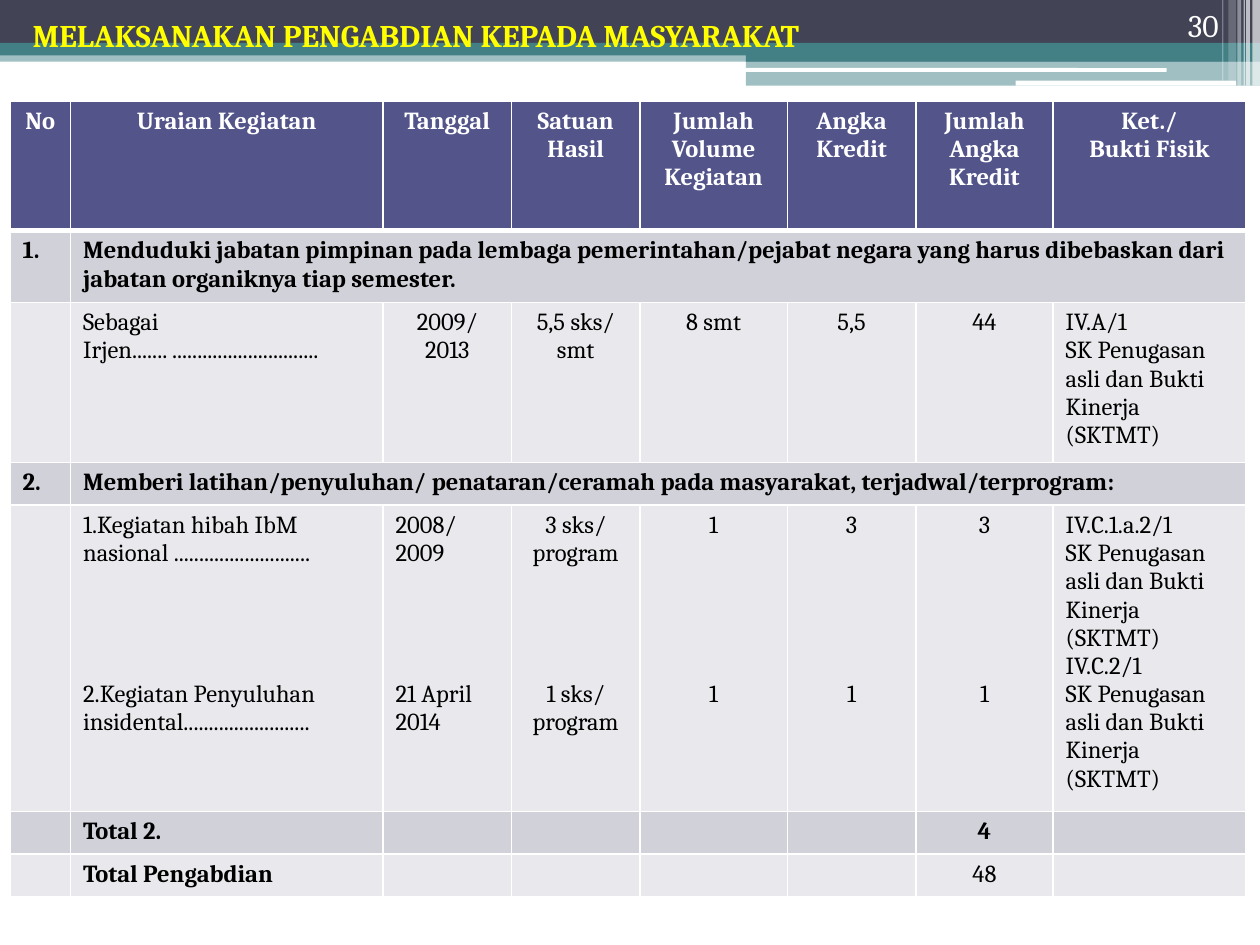
from lxml import etree
from pptx import Presentation
from pptx.dml.color import RGBColor
from pptx.enum import shapes, text
from pptx.oxml.ns import qn
from pptx.util import Inches, Pt

FONT = "Cambria"
WHITE = RGBColor(0xFF, 0xFF, 0xFF)
BLACK = RGBColor(0, 0, 0)
YELLOW = RGBColor(0xFF, 0xFF, 0)
SLATE = RGBColor(0x42, 0x44, 0x56)
TEAL = RGBColor(0x43, 0x80, 0x86)
HEADER_FILL = RGBColor(0x53, 0x54, 0x8A)
BAND_DARK = RGBColor(0xD1, 0xD1, 0xDA)
BAND_LIGHT = RGBColor(0xE9, 0xE9, 0xED)

# Content: one list per table row, paragraphs of a cell split by line breaks
TITLE = "MELAKSANAKAN PENGABDIAN KEPADA MASYARAKAT"
PAGE_NUMBER = "30"
EVIDENCE = "SK Penugasan asli dan Bukti Kinerja (SKTMT)"
ROWS = [
    ["No", "Uraian Kegiatan", "Tanggal", "Satuan Hasil", "Jumlah Volume Kegiatan",
     "Angka Kredit", "Jumlah Angka Kredit", "Ket./\nBukti Fisik"],
    ["1.", "Menduduki jabatan pimpinan pada lembaga pemerintahan/pejabat negara "
     "yang harus dibebaskan dari jabatan organiknya tiap semester."],
    ["", "Sebagai Irjen....... .............................", "2009/ 2013",
     "5,5 sks/ smt", "8 smt", "5,5", "44", f"IV.A/1\n{EVIDENCE}"],
    ["2.", "Memberi latihan/penyuluhan/ penataran/ceramah pada masyarakat, "
     "terjadwal/terprogram:"],
    ["", "1.Kegiatan hibah IbM nasional ...........................\n"
     "2.Kegiatan Penyuluhan insidental.........................",
     "2008/ 2009\n21 April 2014", "3 sks/ program\n1 sks/ program", "1\n1", "3\n1",
     "3\n1", f"IV.C.1.a.2/1\n{EVIDENCE}\nIV.C.2/1\n{EVIDENCE}"],
    ["", "Total 2.", "", "", "", "", "4", ""],
    ["", "Total Pengabdian", "", "", "", "", "48", ""],
]
COLUMN_WIDTHS = [0.48, 2.48, 1.02, 1.02, 1.17, 1.02, 1.09, 1.53]
ROW_HEIGHTS = [1.03, 0.57, 1.27, 0.34, 2.43, 0.34, 0.33]
SECTION_ROWS = (1, 3)
ACTIVITIES_ROW = 4
LINE_PITCH = 16.1
# Blank lines between the two activities, by column
ACTIVITY_GAPS = {1: 4, 2: 4, 3: 4, 4: 5, 5: 5, 6: 5}

# Banner parts: left, top, width, height, colour, opacity in percent
BANNER = [
    (0, 0.4, 10, 0.09, TEAL, 50),
    (0, 0, 10, 0.34, SLATE, 100),
    (0, 0.34, 10, 0.1, TEAL, 100),
    (5.92, 0.39, 4.08, 0.1, TEAL, 100),
    (5.92, 0.48, 4.08, 0.2, TEAL, 50),
]
WHITE_BARS = [(5.91, 0.54, 3.35, 0.03, WHITE, 100), (8.06, 0.64, 1.75, 0.04, WHITE, 100)]
STRIPES = [(left, 0, width, height, WHITE, opacity) for left, width, height, opacity in [
    (9.94, 0.06, 0.68, 65), (9.89, 0.03, 0.68, 65), (9.87, 0.01, 0.68, 60),
    (9.82, 0.03, 0.68, 40), (9.75, 0.06, 0.64, 20), (9.7, 0.01, 0.64, 30)]]


def add_bar(slide, preset, left, top, width, height, colour, opacity):
    bar = slide.shapes.add_shape(preset, *map(Inches, (left, top, width, height)))
    bar.shadow.inherit = False
    bar.line.fill.background()
    bar.fill.solid()
    bar.fill.fore_color.rgb = colour
    if opacity < 100:
        rgb = bar.fill._xPr.find(".//" + qn("a:srgbClr"))
        etree.SubElement(rgb, qn("a:alpha"), val=str(opacity * 1000))


def add_text(paragraph, words, size, colour, bold=False):
    run = paragraph.add_run()
    run.text = words
    run.font.name = FONT
    run.font.size = Pt(size)
    run.font.bold = bold
    run.font.color.rgb = colour


def set_borders(cell, top, bottom):
    properties = cell._tc.get_or_add_tcPr()
    for side, width in (("L", 1), ("R", 1), ("T", top), ("B", bottom)):
        line = etree.SubElement(properties, qn(f"a:ln{side}"), w=str(Pt(width)))
        fill = etree.SubElement(line, qn("a:solidFill"))
        etree.SubElement(fill, qn("a:srgbClr"), val=str(WHITE))


def fill_cell(cell, row, column, content):
    header = row == 0
    set_borders(cell, top=3 if row == 1 else 1, bottom=3 if header else 1)
    cell.fill.solid()
    cell.fill.fore_color.rgb = HEADER_FILL if header else (BAND_DARK if row % 2 else BAND_LIGHT)
    bold = header or row in (1, 3, 5) or (row == 6 and column == 1)
    centred = header or (2 <= column <= 6 and (row, column) != (ACTIVITIES_ROW, 2))
    for index, words in enumerate(content.split("\n")):
        frame = cell.text_frame
        paragraph = frame.add_paragraph() if index else frame.paragraphs[0]
        paragraph.alignment = text.PP_ALIGN.CENTER if centred else text.PP_ALIGN.LEFT
        if index and row == ACTIVITIES_ROW and column in ACTIVITY_GAPS:
            paragraph.space_before = Pt(ACTIVITY_GAPS[column] * LINE_PITCH)
        if words:
            add_text(paragraph, words, 14, WHITE if header else BLACK, bold)
        else:
            etree.SubElement(paragraph._p, qn("a:endParaRPr"), sz="1400")


def add_activity_table(slide):
    table = slide.shapes.add_table(
        len(ROWS), len(COLUMN_WIDTHS), Inches(0.08), Inches(0.8),
        Inches(sum(COLUMN_WIDTHS)), Inches(sum(ROW_HEIGHTS))).table
    table.horz_banding = False
    for column, width in enumerate(COLUMN_WIDTHS):
        table.columns[column].width = Inches(width)
    for row, (height, contents) in enumerate(zip(ROW_HEIGHTS, ROWS)):
        table.rows[row].height = Inches(height)
        for column in range(len(COLUMN_WIDTHS)):
            content = contents[column] if column < len(contents) else ""
            fill_cell(table.cell(row, column), row, column, content)
    for row in SECTION_ROWS:
        table.cell(row, 1).merge(table.cell(row, len(COLUMN_WIDTHS) - 1))


def main():
    deck = Presentation()
    deck.slide_width, deck.slide_height = Inches(10), Inches(7.5)
    slide = deck.slides.add_slide(deck.slide_layouts[5])

    # Banner
    for preset, bars in ((shapes.MSO_SHAPE.RECTANGLE, BANNER),
                         (shapes.MSO_SHAPE.ROUNDED_RECTANGLE, WHITE_BARS),
                         (shapes.MSO_SHAPE.RECTANGLE, STRIPES)):
        for bar in bars:
            add_bar(slide, preset, *bar)

    # Page number
    number = slide.shapes.add_textbox(Inches(8.94), 0, Inches(0.83), Inches(0.4)).text_frame
    number.word_wrap = True
    number.vertical_anchor = text.MSO_ANCHOR.BOTTOM
    number.paragraphs[0].alignment = text.PP_ALIGN.RIGHT
    add_text(number.paragraphs[0], PAGE_NUMBER, 18, WHITE)

    # Title, brought in front of the banner
    title = slide.shapes.title
    title.left, title.top, title.width, title.height = map(Inches, (0.16, 0.08, 9.61, 0.4))
    title.text_frame.auto_size = text.MSO_AUTO_SIZE.NONE
    title.text_frame.vertical_anchor = text.MSO_ANCHOR.TOP
    heading = title.text_frame.paragraphs[0]
    heading.alignment = text.PP_ALIGN.LEFT
    add_text(heading, TITLE, 18, YELLOW, bold=True)
    title._element.getparent().append(title._element)

    add_activity_table(slide)
    deck.save("out.pptx")


if __name__ == "__main__":
    main()
